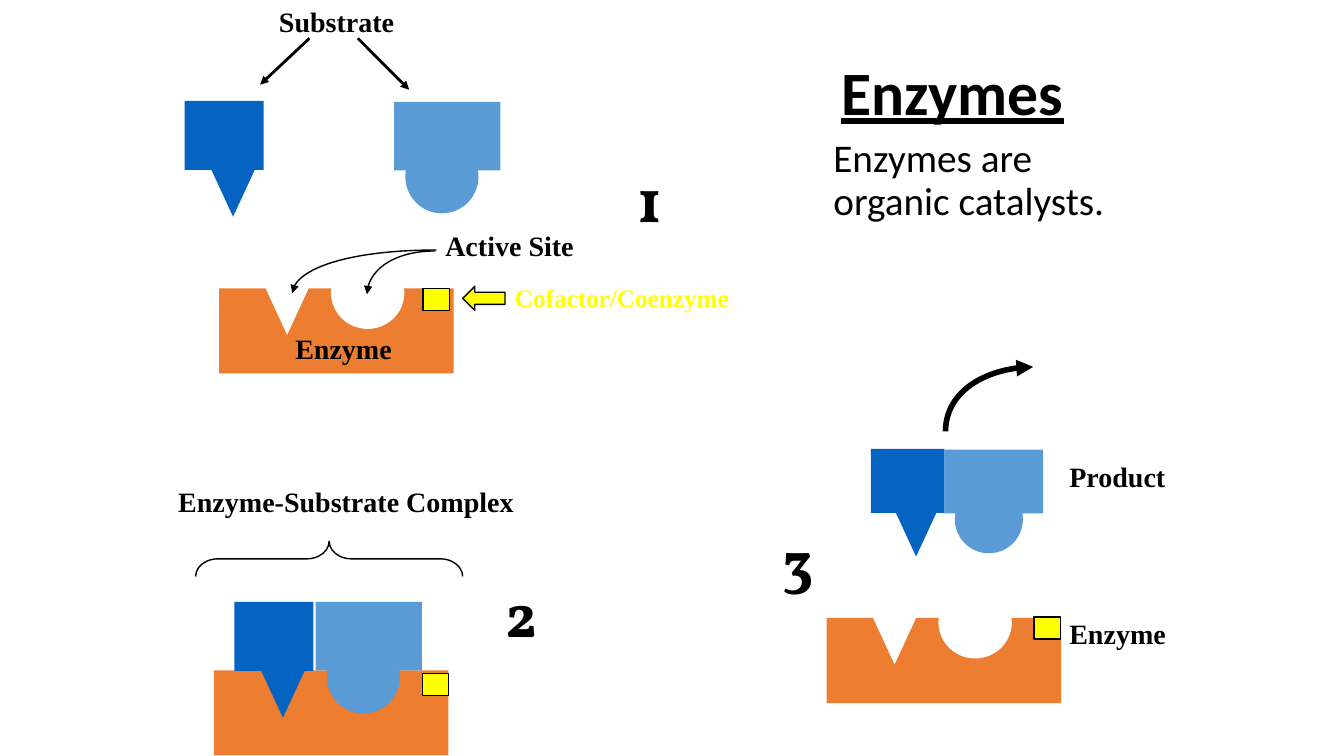
from typing import NamedTuple

from lxml import etree
from pptx import Presentation
from pptx import util as u
from pptx.dml.color import RGBColor
from pptx.enum import shapes, text
from pptx.oxml.ns import qn

COLORS = {
    "black": "000000",
    "white": "FFFFFF",
    "wedge": "0563C1",
    "cup": "5B9BD5",
    "enzyme": "ED7D31",
    "cofactor": "FFFF00",
}
KIND = shapes.MSO_SHAPE
SERIF = "Times New Roman"


class Part(NamedTuple):
    kind: int
    x: float
    y: float
    w: float
    h: float
    color: str


class Place(NamedTuple):
    x: float
    y: float
    scale: float = 1.0


class Enzyme(NamedTuple):
    x: float
    y: float
    open_sites: bool
    cofactor_x: float
    cofactor_y: float


class Label(NamedTuple):
    words: str
    x: float
    y: float
    w: float
    h: float = 31
    size: float = 20
    font: str = SERIF
    color: str = "black"
    bold: bool = True
    underline: bool = False
    anchor: int = text.MSO_ANCHOR.TOP
    spacing: float = 1.0


class Curve(NamedTuple):
    start: tuple[float, float]
    end: tuple[float, float]
    controls: tuple[tuple[float, float], tuple[float, float]]
    weight: float


WEDGE = [
    Part(KIND.DIAMOND, 19.2, 15.8, 31, 67, "wedge"),
    Part(KIND.RECTANGLE, 0, 0, 56.5, 49.3, "wedge"),
]
CUP = [
    Part(KIND.OVAL, 8, 27.4, 52.3, 52.3, "cup"),
    Part(KIND.RECTANGLE, 0, 0, 75.9, 49, "cup"),
    Part(KIND.RECTANGLE, 8.6, 47.5, 51.1, 8, "cup"),
]
BODY = [Part(KIND.RECTANGLE, 0, 0, 167.5, 60.8, "enzyme")]
SITES = [
    Part(KIND.OVAL, 79.9, -23, 52.5, 52, "white"),
    Part(KIND.DIAMOND, 33.1, -33.8, 31, 67, "white"),
]

ENZYMES = [
    Enzyme(156.5, 206, True, 302.2, 206.2),
    Enzyme(152.8, 478.8, False, 301.6, 481),
    Enzyme(590.4, 441.4, True, 738.6, 440.6),
]
CUPS = [Place(281.5, 72.7), Place(225.4, 429.9), Place(674.6, 321.1, 0.93)]
WEDGES = [Place(131.8, 72), Place(167.4, 429.9), Place(622.1, 320.6, 0.93)]

SUBSTRATE_ARROWS = [((221, 27.4), (185.8, 60.5)), ((255.6, 27.4), (292.3, 64.1))]
CURVES = [
    Curve((311.8, 178.6), (208.8, 209.5), ((254.9, 178.6), (208.8, 192.2)), 1),
    Curve((311, 179.3), (262.1, 210.2), ((284.4, 179.3), (262.1, 193)), 1),
    Curve((675.4, 308.2), (738, 262.1), ((675.4, 283), (703.4, 262.1)), 4),
]

LABELS = [
    Label("Substrate", 192.2, 0, 104),
    Label("Enzyme", 203.8, 233.3, 90),
    Label("Active Site", 311, 159.8, 116),
    Label("Enzyme-Substrate Complex", 120.2, 342.7, 262),
    Label("Product", 756.7, 324.7, 90),
    Label("Enzyme", 756.7, 437, 90),
    Label("Cofactor/Coenzyme", 360.7, 198, 191.5, 28.8, 18, color="cofactor"),
    Label("1", 448.6, 111.6, 36.7, 60.5, 44, "Vollkorn"),
    Label("2", 354.2, 408.2, 36.7, 60.5, 44, "Vollkorn"),
    Label("3", 552.2, 370.1, 36.7, 60.5, 44, "Vollkorn"),
    Label("Enzymes", 594, 21.6, 216, 92.9, 44, "Calibri", underline=True,
          anchor=text.MSO_ANCHOR.MIDDLE, spacing=0.9),
    Label("Enzymes are organic catalysts.", 588.2, 95.8, 239, 329, 28, "Calibri",
          bold=False, spacing=0.9),
]


def rgb(name: str) -> RGBColor:
    return RGBColor.from_string(COLORS[name])


def set_line(sp, weight: float) -> None:
    sp.line.color.rgb = rgb("black")
    sp.line.width = u.Pt(weight)


def add_arrowhead(sp) -> None:
    etree.SubElement(sp.line._get_or_add_ln(), qn("a:tailEnd"), type="triangle")


def draw_part(s, part: Part, place: Place = Place(0, 0), weight: float = 0) -> None:
    k = place.scale
    sp = s.shapes.add_shape(
        part.kind, u.Pt(place.x + k * part.x), u.Pt(place.y + k * part.y),
        u.Pt(k * part.w), u.Pt(k * part.h))
    sp.shadow.inherit = False
    sp.fill.solid()
    sp.fill.fore_color.rgb = rgb(part.color)
    if weight:
        set_line(sp, weight)
    else:
        sp.line.fill.background()


def draw_parts(s, parts: list[Part], place: Place) -> None:
    for part in parts:
        draw_part(s, part, place)


def draw_enzyme(s, enzyme: Enzyme) -> None:
    parts = BODY + SITES if enzyme.open_sites else BODY
    draw_parts(s, parts, Place(enzyme.x, enzyme.y))
    cofactor = Part(KIND.RECTANGLE, enzyme.cofactor_x, enzyme.cofactor_y,
                    19, 15.8, "cofactor")
    draw_part(s, cofactor, weight=1)


def draw_arrow(s, start: tuple[float, float], end: tuple[float, float]) -> None:
    cx = s.shapes.add_connector(
        shapes.MSO_CONNECTOR.STRAIGHT, *map(u.Pt, start + end))
    set_line(cx, 2)
    add_arrowhead(cx)
    etree.SubElement(cx._element.spPr, qn("a:effectLst"))


def draw_curve(s, curve: Curve) -> None:
    fb = s.shapes.build_freeform(*map(u.Pt, curve.start))
    points = [tuple(map(u.Pt, pt)) for pt in (*curve.controls, curve.end)]
    fb.add_line_segments(points, close=False)
    sp = fb.convert_to_shape()
    segments = list(sp._element.iter(qn("a:lnTo")))
    outline = segments[0].getparent()
    bezier = etree.SubElement(outline, qn("a:cubicBezTo"))
    for segment in segments:
        bezier.append(segment[0])
        outline.remove(segment)
    sp.shadow.inherit = False
    sp.fill.background()
    set_line(sp, curve.weight)
    add_arrowhead(sp)


def draw_brace(s) -> None:
    sp = s.shapes.add_shape(
        KIND.LEFT_BRACE, u.Pt(222.5), u.Pt(303.8), u.Pt(25.2), u.Pt(190.8))
    sp.rotation = 90
    sp.adjustments[0] = 0.63
    sp.shadow.inherit = False
    sp.fill.background()
    set_line(sp, 1)


def draw_label(s, label: Label) -> None:
    sp = s.shapes.add_textbox(*map(u.Pt, (label.x, label.y, label.w, label.h)))
    tf = sp.text_frame
    tf.word_wrap = True
    tf.vertical_anchor = label.anchor
    p = tf.paragraphs[0]
    p.text = label.words
    p.line_spacing = label.spacing
    p.font.name = label.font
    p.font.size = u.Pt(label.size)
    p.font.bold = label.bold
    p.font.underline = label.underline
    p.font.color.rgb = rgb(label.color)


def main() -> None:
    prs = Presentation()
    prs.slide_width, prs.slide_height = u.Pt(960), u.Pt(540)
    s = prs.slides.add_slide(prs.slide_layouts[6])
    for enzyme in ENZYMES:
        draw_enzyme(s, enzyme)
    for parts, places in ((CUP, CUPS), (WEDGE, WEDGES)):
        for place in places:
            draw_parts(s, parts, place)
    for start, end in SUBSTRATE_ARROWS:
        draw_arrow(s, start, end)
    for curve in CURVES:
        draw_curve(s, curve)
    draw_brace(s)
    draw_part(s, Part(KIND.LEFT_ARROW, 330.5, 204.5, 30.2, 17.3, "cofactor"), weight=1)
    for label in LABELS:
        draw_label(s, label)
    prs.save("out.pptx")


if __name__ == "__main__":
    main()
